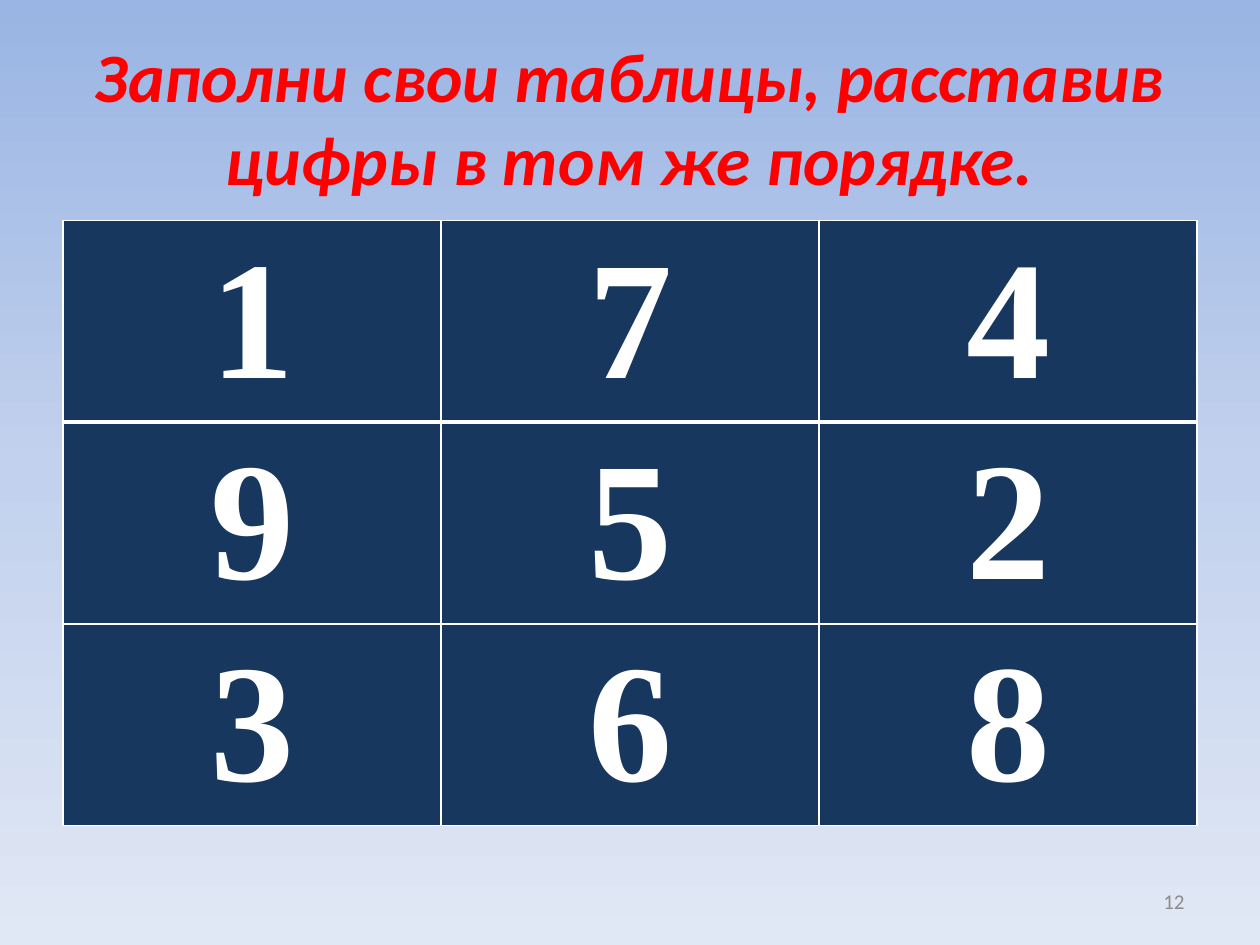
from copy import deepcopy

from lxml import etree
from pptx import Presentation
from pptx import util as u
from pptx.dml.color import RGBColor
from pptx.enum import text
from pptx.oxml.ns import qn

COLORS = {
    "top": "9AB5E4",
    "mid": "C2D1ED",
    "low": "E1E8F5",
    "title": "FF0000",
    "cell": "17375E",
    "white": "FFFFFF",
    "page": "8C8C8C",
}
DIGITS = ["174", "952", "368"]


def color(name):
    return RGBColor.from_string(COLORS[name])


class Deck:
    def __init__(self, wide, high):
        self.prs = Presentation()
        self.prs.slide_width = u.Inches(wide)
        self.prs.slide_height = u.Inches(high)
        self.slide = self.prs.slides.add_slide(self.prs.slide_layouts[6])

    def backdrop(self, names):
        fill = self.slide.background.fill
        fill.gradient()
        fill.gradient_angle = 270
        stops = self.slide.element.find(".//" + qn("a:gsLst"))
        for _ in names[2:]:
            stops.append(deepcopy(stops[0]))
        for i, (stop, name) in enumerate(zip(fill.gradient_stops, names)):
            stop.position = i / (len(names) - 1)
            stop.color.rgb = color(name)

    def letter(self, frame, words, face, size, tint, align, bold=False, slant=False):
        frame.text = words
        par = frame.paragraphs[0]
        par.alignment = align
        font = par.runs[0].font
        font.name, font.size = face, u.Pt(size)
        font.bold, font.italic = bold, slant
        font.color.rgb = color(tint)
        return par

    def label(self, box, *args, **style):
        frame = self.slide.shapes.add_textbox(*map(u.Inches, box)).text_frame
        frame.word_wrap = True
        frame.vertical_anchor = text.MSO_ANCHOR.MIDDLE
        self.letter(frame, *args, **style)

    def border(self, cell, side, width):
        line = etree.SubElement(
            cell._tc.get_or_add_tcPr(), qn("a:ln" + side), w=str(u.Pt(width))
        )
        fill = etree.SubElement(line, qn("a:solidFill"))
        etree.SubElement(fill, qn("a:srgbClr"), val=COLORS["white"])

    def grid(self, box, rows):
        shape = self.slide.shapes.add_table(
            len(rows), len(rows[0]), *map(u.Inches, box)
        )
        for r, row in enumerate(rows):
            for c, digit in enumerate(row):
                cell = shape.table.cell(r, c)
                cell.margin_left = cell.margin_right = u.Inches(0.07)
                cell.margin_top = cell.margin_bottom = 0
                cell.vertical_anchor = text.MSO_ANCHOR.MIDDLE
                par = self.letter(
                    cell.text_frame, digit, "Times New Roman", 96,
                    "white", text.PP_ALIGN.CENTER, bold=True,
                )
                par.space_after = u.Pt(6)
                widths = {"L": 1, "R": 1, "T": 3 if r == 1 else 1, "B": 3 if r == 0 else 1}
                for side, width in widths.items():
                    self.border(cell, side, width)
                cell.fill.solid()
                cell.fill.fore_color.rgb = color("cell")


def main():
    deck = Deck(10, 7.5)
    deck.backdrop(["top", "mid", "low"])
    deck.label(
        (0.5, 0.3, 9, 1.25),
        "Заполни свои таблицы, расставив цифры в том же порядке.",
        "Calibri", 39.6, "title", text.PP_ALIGN.CENTER, bold=True, slant=True,
    )
    deck.grid((0.5, 1.75, 9, 4.42), DIGITS)
    deck.label((7.17, 6.95, 2.33, 0.4), "12", "Calibri", 12, "page", text.PP_ALIGN.RIGHT)
    deck.prs.save("out.pptx")


if __name__ == "__main__":
    main()
